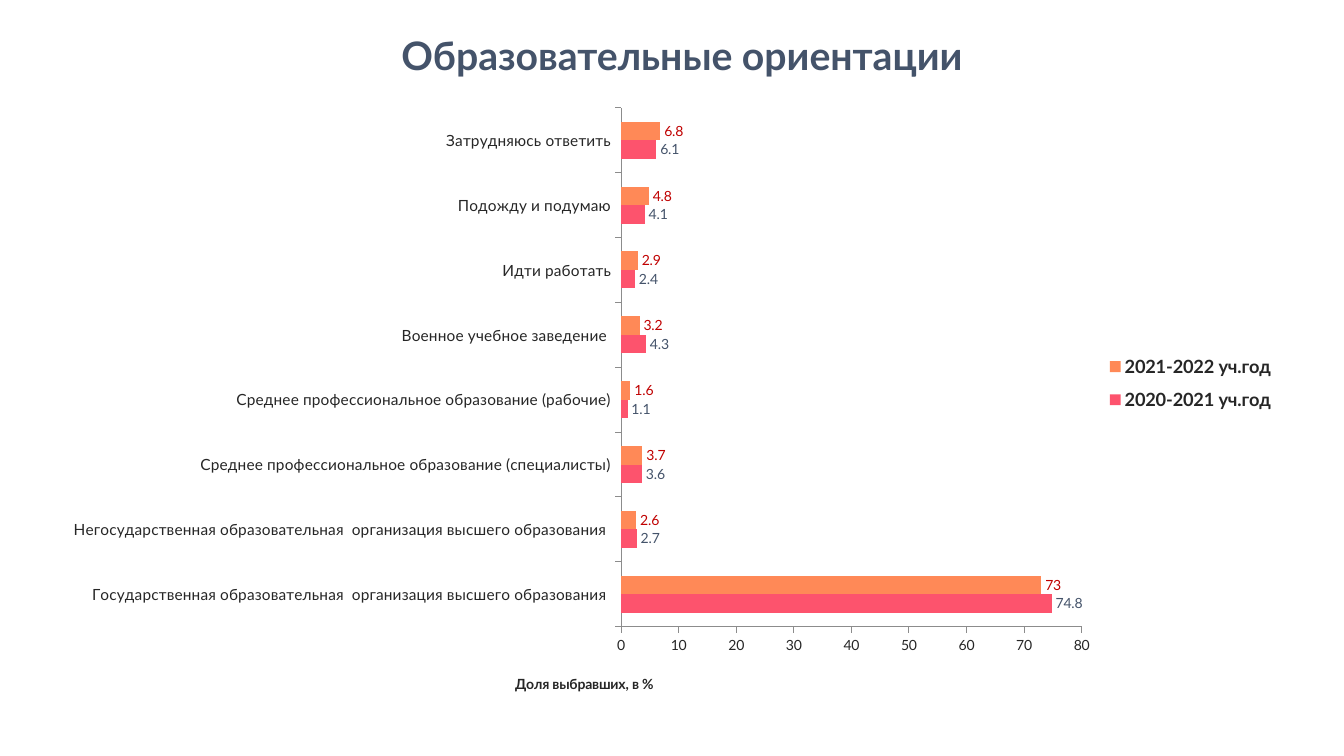
from dataclasses import dataclass
from typing import Any

from lxml.etree import SubElement
from pptx import Presentation
from pptx.chart.data import CategoryChartData
from pptx.dml.color import RGBColor
from pptx.enum.chart import XL_CHART_TYPE as Kind
from pptx.enum.chart import XL_LABEL_POSITION as Spot
from pptx.enum.chart import XL_LEGEND_POSITION as Side
from pptx.enum.chart import XL_TICK_MARK as Tick
from pptx.enum.text import MSO_ANCHOR as Anchor
from pptx.enum.text import PP_ALIGN as Align
from pptx.oxml import parse_xml
from pptx.oxml.ns import nsdecls, qn
from pptx.util import Cm, Pt

FACE = "Lato"
NAVY = RGBColor(0x44, 0x53, 0x6A)
DARK = RGBColor(0x26, 0x26, 0x26)
GRAY = RGBColor(0x8C, 0x8C, 0x8C)
PINK = RGBColor(0xFD, 0x53, 0x6D)
CORAL = RGBColor(0xFF, 0x89, 0x57)
RED = RGBColor(0xC0, 0x00, 0x00)


@dataclass
class Year:
    name: str
    vals: tuple[float, ...]
    fill: RGBColor
    ink: RGBColor


GOALS = (
    "Государственная образовательная  организация высшего образования ",
    "Негосударственная образовательная  организация высшего образования ",
    "Среднее профессиональное образование (специалисты)",
    "Среднее профессиональное образование (рабочие)",
    "Военное учебное заведение ",
    "Идти работать",
    "Подожду и подумаю",
    "Затрудняюсь ответить",
)
YEARS = (
    Year("2020-2021 уч.год", (74.8, 2.7, 3.6, 1.1, 4.3, 2.4, 4.1, 6.1), PINK, NAVY),
    Year("2021-2022 уч.год", (73, 2.6, 3.7, 1.6, 3.2, 2.9, 4.8, 6.8), CORAL, RED),
)


def assign(item: Any, values: dict[str, Any]) -> None:
    for key, val in values.items():
        setattr(item, key, val)


def style(font: Any, size: float, ink: RGBColor, bold: bool = False) -> None:
    assign(font, {"name": FACE, "size": Pt(size), "bold": bold})
    font.color.rgb = ink


def place(part: Any, inner: bool = False, **spots: float) -> None:
    """Fix a chart part at fractions of the chart's size."""
    layout = part.find(qn("c:layout"))
    if layout is None:
        layout = parse_xml(f"<c:layout {nsdecls('c')}/>")
        part.insert(0, layout)
    manual = SubElement(layout, qn("c:manualLayout"))
    rules = {"layoutTarget": "inner"} if inner else {}
    rules |= {"xMode": "edge", "yMode": "edge"}
    rules |= {key: str(val) for key, val in spots.items()}
    for key, val in rules.items():
        SubElement(manual, qn(f"c:{key}")).set("val", val)


def add_title(slide: Any) -> None:
    box = slide.shapes.add_textbox(Cm(1.22), Cm(0.08), Cm(31.93), Cm(1.83))
    frame = box.text_frame
    assign(frame, {"word_wrap": True, "vertical_anchor": Anchor.TOP})
    para = frame.paragraphs[0]
    assign(para, {"alignment": Align.CENTER, "line_spacing": 1.5})
    run = para.add_run()
    run.text = "Образовательные ориентации"
    style(run.font, 28, NAVY, True)


def add_bars(slide: Any) -> None:
    data = CategoryChartData()
    data.categories = GOALS
    for year in YEARS:
        data.add_series(year.name, year.vals)
    chart = slide.shapes.add_chart(
        Kind.BAR_CLUSTERED, Cm(1.22), Cm(2.44), Cm(31.45), Cm(15.42), data
    ).chart
    assign(chart, {"has_title": False, "has_legend": True})
    style(chart.font, 10, DARK)

    # Bars and value labels
    plot = chart.plots[0]
    assign(plot, {"gap_width": 150, "overlap": 0, "vary_by_categories": False})
    for bars, year in zip(plot.series, YEARS):
        bars.format.fill.solid()
        bars.format.fill.fore_color.rgb = year.fill
        labels = bars.data_labels
        assign(labels, {"show_value": True, "position": Spot.OUTSIDE_END})
        style(labels.font, 10, year.ink)

    # Axes
    goal, share = chart.category_axis, chart.value_axis
    for axis, size in ((goal, 11), (share, 10)):
        assign(axis, {
            "has_major_gridlines": False,
            "major_tick_mark": Tick.OUTSIDE,
            "minor_tick_mark": Tick.NONE,
        })
        style(axis.tick_labels.font, size, DARK)
        line = axis.format.line
        line.width = Pt(0.75)
        line.color.rgb = GRAY
    assign(share, {"minimum_scale": 0, "maximum_scale": 80, "major_unit": 10})
    frame = share.axis_title.text_frame
    frame.text = "Доля выбравших, в %"
    style(frame.paragraphs[0].runs[0].font, 10, DARK, True)

    # Legend
    legend = chart.legend
    assign(legend, {"position": Side.RIGHT, "include_in_layout": False})
    style(legend.font, 13, DARK, True)

    # Positions within the chart
    area = chart.element.find(f".//{qn('c:plotArea')}")
    place(area, inner=True, x=0.459, y=0.018, w=0.369, h=0.848)
    place(share.axis_title.element if hasattr(share.axis_title, "element")
          else area.find(f".//{qn('c:title')}"), x=0.372, y=0.94)
    key = chart.element.find(f".//{qn('c:legend')}")
    place(key, x=0.84, y=0.405, w=0.15, h=0.126)


def main() -> None:
    deck = Presentation()
    assign(deck, {"slide_width": Cm(33.87), "slide_height": Cm(19.05)})
    slide = deck.slides.add_slide(deck.slide_layouts[6])
    add_title(slide)
    add_bars(slide)
    deck.save("out.pptx")


if __name__ == "__main__":
    main()
